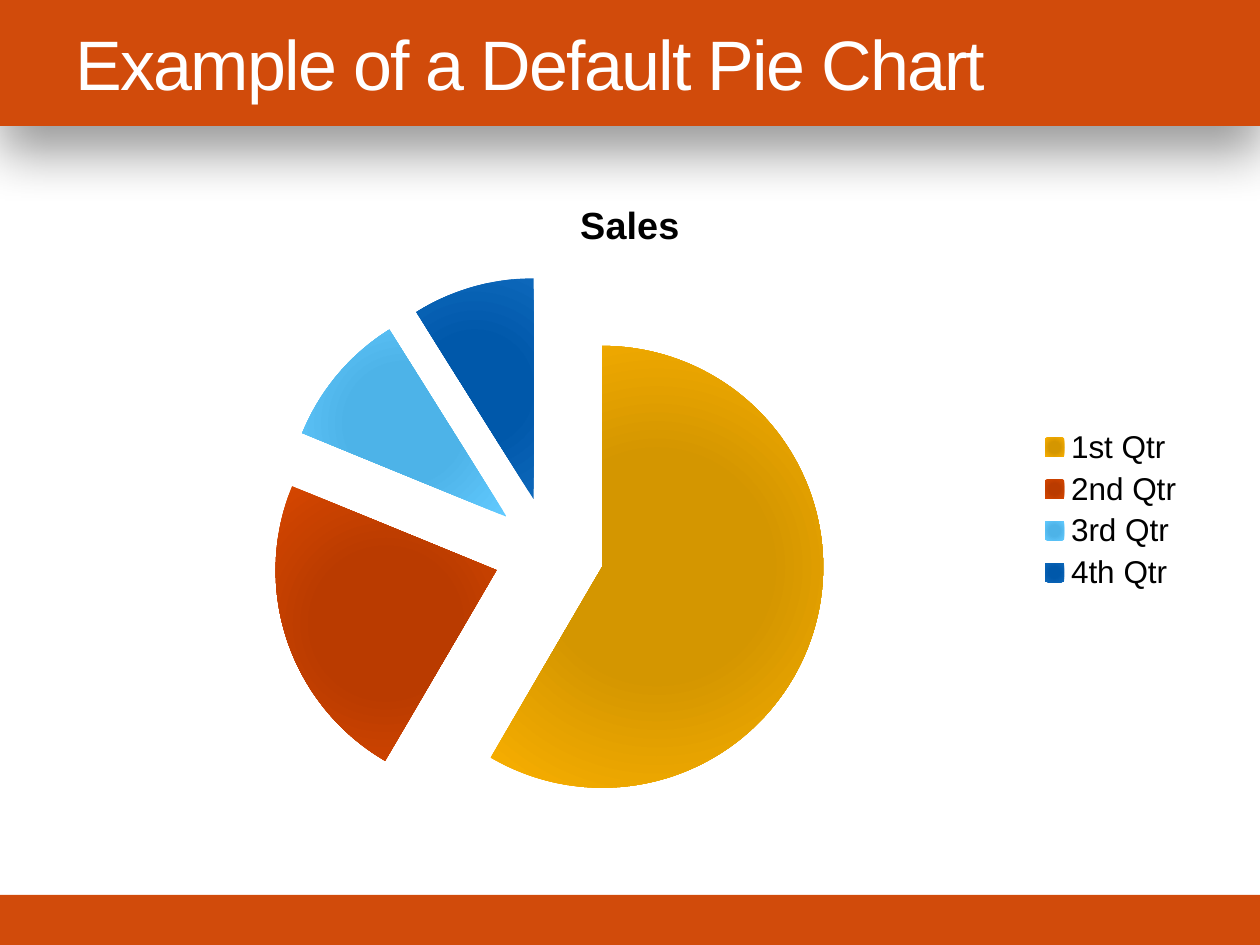
"""Build a slide with an exploded pie chart between two coloured bands."""
import dataclasses
import typing

import lxml.etree
import pptx
import pptx.chart.data
import pptx.dml.color
import pptx.enum.chart
import pptx.enum.shapes
import pptx.enum.text
import pptx.oxml
import pptx.oxml.ns
import pptx.util

EMU_PER_PX = 914400 / 126
COLOURS = {"band": "D14B0B", "white": "FFFFFF", "black": "000000"}
TITLE_FONT = {"name": "Arial", "size": pptx.util.Pt(40), "bold": False}
CHART_FONT = {"name": "Arial", "size": pptx.util.Pt(18), "bold": False}
CHART_TITLE_FONT = {"name": "Arial", "size": pptx.util.Pt(21.6), "bold": True}
EXPLOSION = 25


@dataclasses.dataclass(frozen=True)
class Box:
    left: int
    top: int
    width: int
    height: int

    def emu(self) -> typing.List[int]:
        return [round(length * EMU_PER_PX) for length in dataclasses.astuple(self)]


@dataclasses.dataclass(frozen=True)
class Quarter:
    label: str
    share: int
    centre: str
    edge: str


HEADER_BOX = Box(0, 0, 1260, 126)
FOOTER_BOX = Box(0, 895, 1260, 50)
TITLE_BOX = Box(63, 0, 1134, 126)
CHART_BOX = Box(63, 174, 1134, 672)
QUARTERS = [
    Quarter("1st Qtr", 59, "D49600", "FAB000"),
    Quarter("2nd Qtr", 23, "BA3B00", "D64700"),
    Quarter("3rd Qtr", 10, "4DB3E8", "62CAFF"),
    Quarter("4th Qtr", 9, "0058AA", "0D67BA"),
]


def rgb(value: str) -> pptx.dml.color.RGBColor:
    return pptx.dml.color.RGBColor.from_string(value)


def apply_format(target: typing.Any, values: typing.Dict[str, typing.Any]) -> None:
    for name, value in values.items():
        setattr(target, name, value)


def apply_font(font: typing.Any, values: typing.Dict[str, typing.Any], colour: str) -> None:
    apply_format(font, values)
    font.color.rgb = rgb(COLOURS[colour])


def add_band(slide: typing.Any, box: Box) -> typing.Any:
    band = slide.shapes.add_shape(pptx.enum.shapes.MSO_SHAPE.RECTANGLE, *box.emu())
    band.shadow.inherit = False
    band.fill.solid()
    band.fill.fore_color.rgb = rgb(COLOURS["band"])
    band.line.fill.background()
    slide.shapes.element.insert(2, band.element)
    return band


def add_shadow(shape: typing.Any) -> None:
    effects = shape.element.spPr.find(pptx.oxml.ns.qn("a:effectLst"))
    effects.append(pptx.oxml.parse_xml(
        f'<a:outerShdw {pptx.oxml.ns.nsdecls("a")} blurRad="{pptx.util.Pt(30)}" '
        f'dist="{pptx.util.Pt(15)}" dir="5400000" algn="ctr" rotWithShape="0">'
        f'<a:srgbClr val="{COLOURS["black"]}"><a:alpha val="40000"/></a:srgbClr>'
        "</a:outerShdw>"
    ))


def fill_title(title: typing.Any, text: str) -> None:
    title.left, title.top, title.width, title.height = TITLE_BOX.emu()
    title.text_frame.vertical_anchor = pptx.enum.text.MSO_ANCHOR.MIDDLE
    paragraph = title.text_frame.paragraphs[0]
    paragraph.alignment = pptx.enum.text.PP_ALIGN.LEFT
    run = paragraph.add_run()
    run.text = text
    apply_font(run.font, TITLE_FONT, "white")
    run.font._element.set("spc", "-100")


def fill_radial(fill: typing.Any, quarter: Quarter) -> None:
    fill.gradient()
    for stop, colour, position in zip(
        fill.gradient_stops, (quarter.centre, quarter.edge), (0.4, 1.0)
    ):
        stop.color.rgb = rgb(colour)
        stop.position = position
    gradient = fill._xPr.find(pptx.oxml.ns.qn("a:gradFill"))
    linear = gradient.find(pptx.oxml.ns.qn("a:lin"))
    gradient.replace(linear, pptx.oxml.parse_xml(
        f'<a:path {pptx.oxml.ns.nsdecls("a")} path="circle">'
        '<a:fillToRect l="50000" t="50000" r="50000" b="50000"/></a:path>'
    ))


def add_pie(slide: typing.Any, quarters: typing.List[Quarter]) -> None:
    data = pptx.chart.data.CategoryChartData()
    data.categories = [quarter.label for quarter in quarters]
    data.add_series("Sales", [quarter.share for quarter in quarters])
    chart = slide.shapes.add_chart(
        pptx.enum.chart.XL_CHART_TYPE.PIE, *CHART_BOX.emu(), data
    ).chart
    apply_font(chart.font, CHART_FONT, "black")
    apply_format(chart, {"has_title": True, "has_legend": True})
    title_frame = chart.chart_title.text_frame
    title_frame.text = "Sales"
    apply_font(title_frame.paragraphs[0].runs[0].font, CHART_TITLE_FONT, "black")
    apply_format(chart.legend, {
        "position": pptx.enum.chart.XL_LEGEND_POSITION.RIGHT,
        "include_in_layout": False,
    })
    plot = chart.plots[0]
    plot.vary_by_categories = True
    series = plot.series[0]
    explosion = lxml.etree.Element(pptx.oxml.ns.qn("c:explosion"), val=str(EXPLOSION))
    series._element.find(pptx.oxml.ns.qn("c:tx")).addnext(explosion)
    for index, quarter in enumerate(quarters):
        point_format = series.points[index].format
        fill_radial(point_format.fill, quarter)
        point_format.line.fill.background()


def main() -> None:
    presentation = pptx.Presentation()
    page = Box(0, 0, 1260, 945).emu()
    apply_format(presentation, {"slide_width": page[2], "slide_height": page[3]})
    slide = presentation.slides.add_slide(presentation.slide_layouts[5])
    fill_title(slide.shapes.title, "Example of a Default Pie Chart")
    add_shadow(add_band(slide, HEADER_BOX))
    add_band(slide, FOOTER_BOX)
    add_pie(slide, QUARTERS)
    presentation.save("out.pptx")


if __name__ == "__main__":
    main()
